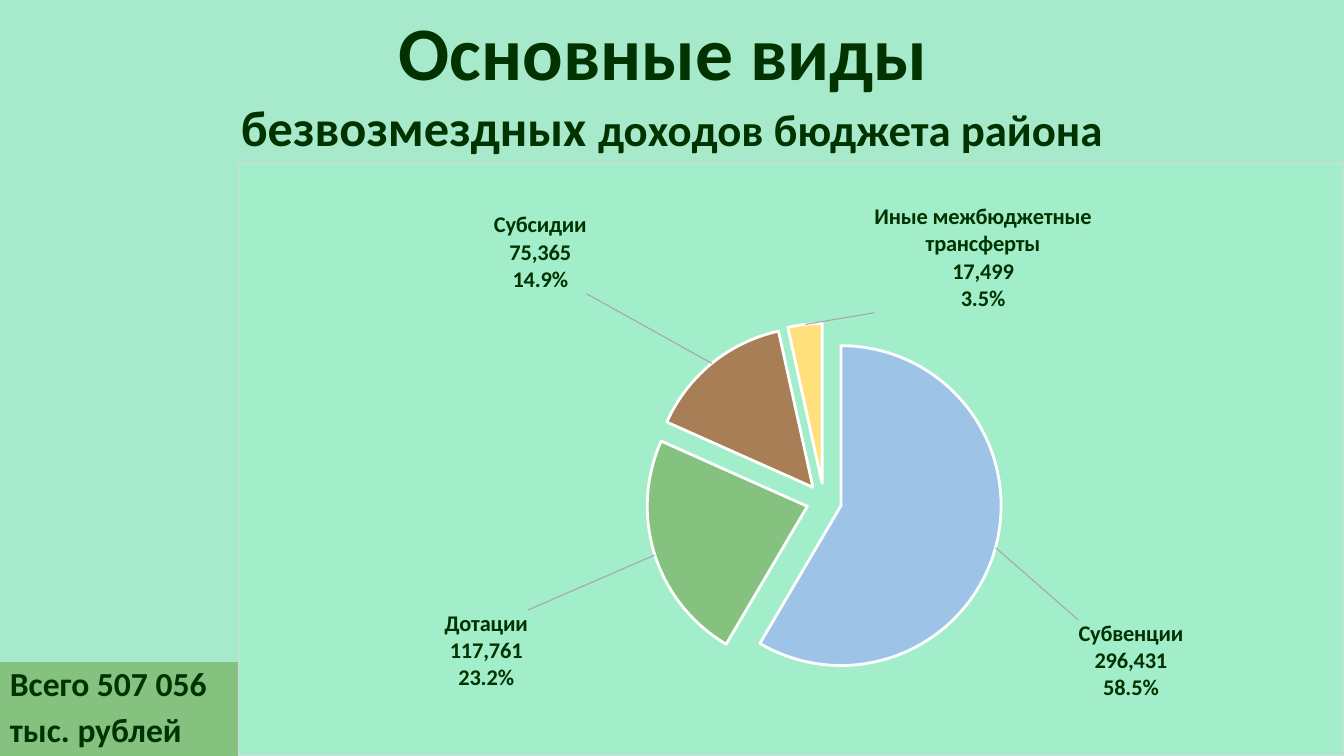
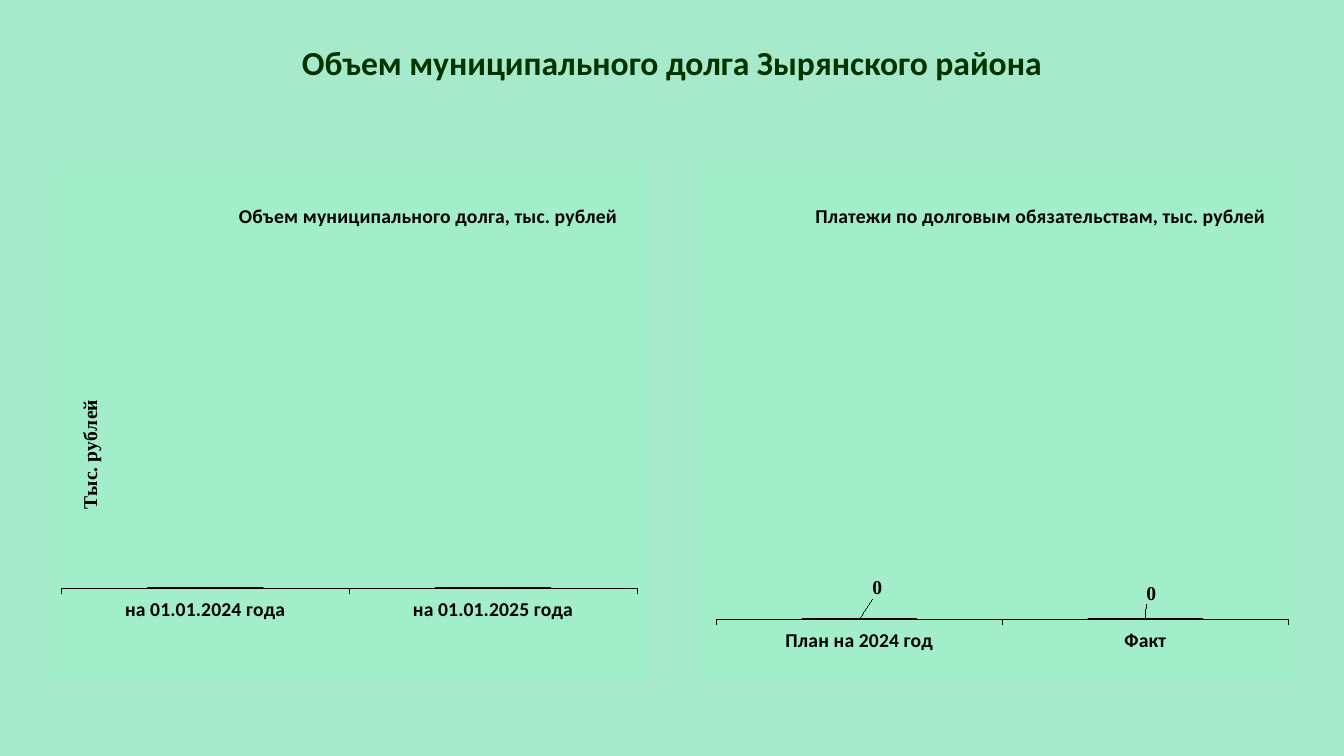
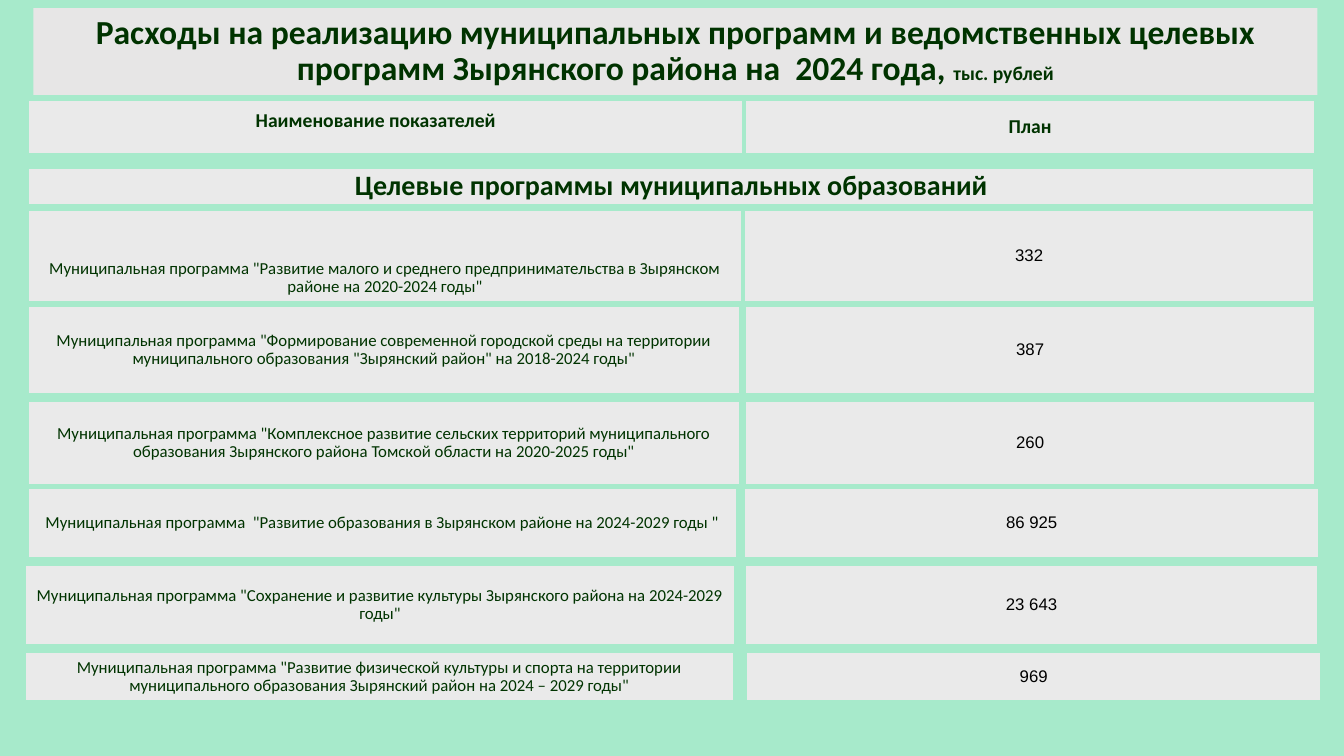
from lxml import etree
from pptx import Presentation
from pptx.chart.data import CategoryChartData
from pptx.dml.color import RGBColor
from pptx.enum import chart as ch, shapes, text
from pptx.oxml.ns import qn
from pptx.util import Pt

COLORS = dict(back="A7EACB", chart="A2EDCA", ink="003300", black="000000",
              green="85C27F", blue="9DC3E6", brown="A77E56", yellow="FFE07D",
              bar="00B050", light_bar="9BD878", frame="D9D9D9", leader="A6A6A6",
              cell="EAEAEA", title_cell="E7E6E6")
WIDTH, HEIGHT = 960, 540
ALIGN, ANCHOR = text.PP_ALIGN, text.MSO_ANCHOR
NS = ('xmlns:c="http://schemas.openxmlformats.org/drawingml/2006/chart" '
      'xmlns:a="http://schemas.openxmlformats.org/drawingml/2006/main"')

# category, value, colour, label shift as shares of the chart
REVENUES = [
    ("Субвенции", 296431, "blue", (0.07, 0.12)),
    ("Дотации", 117761, "green", (-0.11, 0.09)),
    ("Субсидии", 75365, "brown", (-0.11, -0.11)),
    ("Иные межбюджетные трансферты", 17499, "yellow", (0.26, -0.01)),
]
DEBT_CHARTS = [
    dict(box=(35.3, 116, 428.4, 370.8), kind="COLUMN_CLUSTERED",
         title="Объем муниципального долга, тыс. рублей", title_at=(0.31, 0.07),
         cats=["на 01.01.2024 года", "на 01.01.2025 года"], vals=[0, 0],
         plot=(0.02, 0.13, 0.96, 0.69), axis_title="Тыс. рублей", shifts=None),
    dict(box=(499, 116, 425.5, 370.8), kind="COLUMN_STACKED",
         title="Платежи по долговым обязательствам, тыс. рублей", title_at=(0.19, 0.07),
         cats=["План на 2024 год", "Факт"], vals=[0, 0],
         plot=(0.03, 0.16, 0.96, 0.72), axis_title=None,
         shifts=[(0.03, -0.06), (0.01, -0.05)]),
]
# programme, plan, (left, width) of both cells, top, height
PROGRAMMES = [
    ('Муниципальная программа "Развитие малого и среднего предпринимательства '
     'в Зырянском районе на 2020-2024 годы"',
     "332", (20.9, 508.3), (532.1, 406.1), 151, 64),
    ('Муниципальная программа "Формирование современной городской среды на территории '
     'муниципального образования "Зырянский район" на 2018-2024 годы"',
     "387", (20.9, 506.9), (532.8, 406.1), 219, 62),
    ('Муниципальная программа "Комплексное развитие сельских территорий муниципального '
     'образования Зырянского района Томской области на 2020-2025 годы"',
     "260", (20.9, 506.9), (532.8, 406.1), 287, 58.5),
    ('Муниципальная программа  "Развитие образования в Зырянском районе на 2024-2029 годы "',
     "86 925", (20.9, 504.7), (532.1, 409.7), 349.5, 48.5),
    ('Муниципальная программа "Сохранение и развитие культуры Зырянского района '
     'на 2024-2029 годы"',
     "23 643", (18.7, 505.4), (532.8, 408.2), 404.6, 55.4),
    ('Муниципальная программа "Развитие физической культуры и спорта на территории '
     'муниципального образования Зырянский район на 2024 – 2029 годы"',
     "969", (18.7, 504.7), (533.5, 409.7), 466.3, 34),
]


def rgb(name):
    return RGBColor.from_string(COLORS[name])


def style_font(font, size, color="ink", bold=True, name="Calibri"):
    font.size, font.bold, font.name = Pt(size), bold, name
    font.color.rgb = rgb(color)


def place(sp, left, top, width, height):
    sp.left, sp.top, sp.width, sp.height = map(Pt, (left, top, width, height))


def write(sp, paragraphs, align=ALIGN.CENTER, anchor=ANCHOR.MIDDLE, spacing=0.9,
          before=0, **font):
    """Fill a shape with paragraphs, each a list of (text, size) runs."""
    tf = sp.text_frame
    tf.word_wrap, tf.auto_size = True, text.MSO_AUTO_SIZE.NONE
    tf.vertical_anchor = anchor
    for i, runs in enumerate(paragraphs):
        p = tf.add_paragraph() if i else tf.paragraphs[0]
        p.alignment, p.line_spacing, p.space_before = align, spacing, Pt(before)
        for words, size in runs:
            r = p.add_run()
            r.text = words
            style_font(r.font, size, **font)
    return tf


def add_slide(title, box, **style):
    s = prs.slides.add_slide(prs.slide_layouts[5])
    place(s.shapes.title, *box)
    write(s.shapes.title, title, **style)
    return s


def add_box(s, box, fill, kind=shapes.MSO_SHAPE.ACTION_BUTTON_CUSTOM):
    sp = s.shapes.add_shape(kind, *map(Pt, box))
    sp.shadow.inherit = False
    sp.fill.solid()
    sp.fill.fore_color.rgb = rgb(fill)
    sp.line.fill.background()
    return sp


def xml(source):
    return etree.fromstring(source.replace(">", f" {NS}>", 1))


def set_layout(parent, position, x, y, size=None):
    """Place a plot area (with a size) or a title by shares of the chart."""
    for old in parent.findall(qn("c:layout")):
        parent.remove(old)
    parts = [("xMode", "edge"), ("yMode", "edge"), ("x", x), ("y", y)]
    if size:
        parts = [("layoutTarget", "inner"), *parts, ("w", size[0]), ("h", size[1])]
    body = "".join(f'<c:{tag} val="{val}"/>' for tag, val in parts)
    parent.insert(position, xml(f"<c:layout><c:manualLayout>{body}</c:manualLayout></c:layout>"))


def add_labels(series, shifts, fmt, size, color, font, position="", pie=False):
    """Label each point, moved from its usual place by a share of the chart."""
    flags = "".join(f'<c:show{name} val="{int(on)}"/>' for name, on in [
        ("LegendKey", 0), ("Val", 1), ("CatName", pie), ("SerName", 0),
        ("Percent", pie), ("BubbleSize", 0)])
    place_tag = f'<c:dLblPos val="{position}"/>' if position else ""
    look = (f'<c:numFmt formatCode="{fmt}" sourceLinked="0"/>'
            '<c:spPr><a:noFill/><a:ln><a:noFill/></a:ln></c:spPr>'
            f'<c:txPr><a:bodyPr/><a:p><a:pPr><a:defRPr sz="{size * 100}" b="1">'
            f'<a:solidFill><a:srgbClr val="{COLORS[color]}"/></a:solidFill>'
            f'<a:latin typeface="{font}"/></a:defRPr></a:pPr>'
            f'<a:endParaRPr lang="ru-RU"/></a:p></c:txPr>{place_tag}{flags}'
            '<c:separator>\n</c:separator>')
    points = "".join(
        f'<c:dLbl><c:idx val="{i}"/><c:layout><c:manualLayout><c:x val="{x}"/>'
        f'<c:y val="{y}"/></c:manualLayout></c:layout>{look}</c:dLbl>'
        for i, (x, y) in enumerate(shifts))
    leaders = ('<c:showLeaderLines val="1"/><c:leaderLines><c:spPr><a:ln w="9525"><a:solidFill>'
               f'<a:srgbClr val="{COLORS["leader"]}"/></a:solidFill></a:ln></c:spPr>'
               '</c:leaderLines>') if pie else ""
    series._element.find(qn("c:cat")).addprevious(
        xml(f"<c:dLbls>{points}{look}{leaders}</c:dLbls>"))


def add_chart(s, kind, box, cats, vals, plot, fmt, border=None):
    data = CategoryChartData(number_format=fmt)
    data.categories = cats
    data.add_series("Series 1", vals)
    chart = s.shapes.add_chart(ch.XL_CHART_TYPE[kind], *map(Pt, box), data).chart
    chart.has_legend = chart.has_title = False
    line = (f'<a:solidFill><a:srgbClr val="{COLORS[border]}"/></a:solidFill>'
            if border else "<a:noFill/>")
    chart._chartSpace.chart.addnext(xml(
        f'<c:spPr><a:solidFill><a:srgbClr val="{COLORS["chart"]}"/></a:solidFill>'
        f'<a:ln w="9525">{line}</a:ln></c:spPr>'))
    set_layout(chart._chartSpace.chart.plotArea, 0, *plot[:2], plot[2:])
    return chart


def set_title(title, words, at, font):
    p = title.text_frame.paragraphs[0]
    r = p.add_run()
    r.text = words
    style_font(r.font, 14, "black", name=font)
    set_layout(title._element, 1, *at)


def revenue_slide():
    s = add_slide([[("Основные виды ", 54)],
                   [("безвозмездных ", 36), ("доходов бюджета района", 32)]],
                  (0, 0, WIDTH, 116.6), anchor=ANCHOR.TOP, spacing=1)
    total = add_box(s, (0, 473, 170, 67), "green", shapes.MSO_SHAPE.RECTANGLE)
    write(total, [[("Всего 507 056", 24)], [("тыс. рублей", 24)]],
          align=ALIGN.LEFT, anchor=ANCHOR.TOP, before=7)
    cats, vals, fills, shifts = zip(*REVENUES)
    chart = add_chart(s, "PIE", (170, 116.6, 790, 423.4), cats, vals,
                      (0.14, 0.27, 0.78, 0.6), "#,##0", "frame")
    style_font(chart.font, 10, "black", bold=False)
    series = chart.plots[0].series[0]
    for i, fill in enumerate(fills):
        look = series.points[i].format
        look.fill.solid()
        look.fill.fore_color.rgb = rgb(fill)
        look.line.color.rgb = RGBColor(255, 255, 255)
        look.line.width = Pt(2)
    series._element.find(qn("c:dPt")).addprevious(xml('<c:explosion val="11"></c:explosion>'))
    add_labels(series, shifts, "0.0%", 16, "ink", "Calibri", "outEnd", pie=True)


def debt_chart(s, d):
    chart = add_chart(s, d["kind"], d["box"], d["cats"], d["vals"], d["plot"], "0")
    style_font(chart.font, 14, "black", name="Times New Roman")
    set_title(chart.chart_title, d["title"], d["title_at"], "Calibri")
    plot = chart.plots[0]
    plot.gap_width, plot.vary_by_categories = 150, False
    axis = chart.category_axis
    style_font(axis.tick_labels.font, 14, "black")
    axis.tick_label_position = ch.XL_TICK_LABEL_POSITION.LOW
    axis.major_tick_mark = ch.XL_TICK_MARK.OUTSIDE
    axis.format.line.color.rgb = rgb("black")
    axis.format.line.width = Pt(0.25)
    values = chart.value_axis
    values.has_major_gridlines = values.visible = False
    values.minimum_scale = 0
    if d["axis_title"]:
        set_title(values.axis_title, d["axis_title"], (0.04, 0.45), "Times New Roman")
        body = values.axis_title.text_frame._txBody.bodyPr
        body.set("rot", "-5400000")
        body.set("vert", "horz")
    series = plot.series[0]
    for look, fill in ((series.format, "bar"), (series.points[1].format, "light_bar")):
        look.fill.solid()
        look.fill.fore_color.rgb = rgb(fill)
        look.line.color.rgb = rgb("black")
        look.line.width = Pt(1)
    if d["shifts"]:
        add_labels(series, d["shifts"], "0", 14, "black", "Times New Roman")


def debt_slide():
    s = add_slide([[("Объем муниципального долга Зырянского района", 24)]],
                  (0, 0, WIDTH, 92))
    for d in DEBT_CHARTS:
        debt_chart(s, d)


def programme_slide():
    s = add_slide([[("Расходы на реализацию муниципальных программ и ведомственных целевых "
                     "программ Зырянского района на  2024 года, ", 24), ("тыс. рублей", 14)]],
                  (23.8, 5.8, 917.3, 61.9))
    s.shapes.title.fill.solid()
    s.shapes.title.fill.fore_color.rgb = rgb("title_cell")
    names = add_box(s, (20.9, 72, 509, 37.5), "cell")
    tf = write(names, [[("Наименование показателей", 14)]])
    tf.margin_right, tf.margin_bottom = Pt(21), Pt(12)
    write(add_box(s, (532.8, 72, 406.1, 37.5), "cell"), [[("План", 14)]])
    write(add_box(s, (20.9, 120.5, 917.3, 25), "cell"),
          [[("Целевые программы муниципальных образований", 20)]])
    for i, (name, plan, name_span, plan_span, top, height) in enumerate(PROGRAMMES):
        for words, (left, width), font in ((name, name_span, {}),
                                           (plan, plan_span, dict(color="black", name="Arial"))):
            low = i == 0 and words == name
            write(add_box(s, (left, top, width, height), "cell"), [[(words, 12)]],
                  anchor=ANCHOR.BOTTOM if low else ANCHOR.MIDDLE, bold=False, **font)


prs = Presentation()
prs.slide_width, prs.slide_height = Pt(WIDTH), Pt(HEIGHT)
back = prs.slide_master.background.fill
back.solid()
back.fore_color.rgb = rgb("back")
revenue_slide()
debt_slide()
programme_slide()
prs.save("out.pptx")
